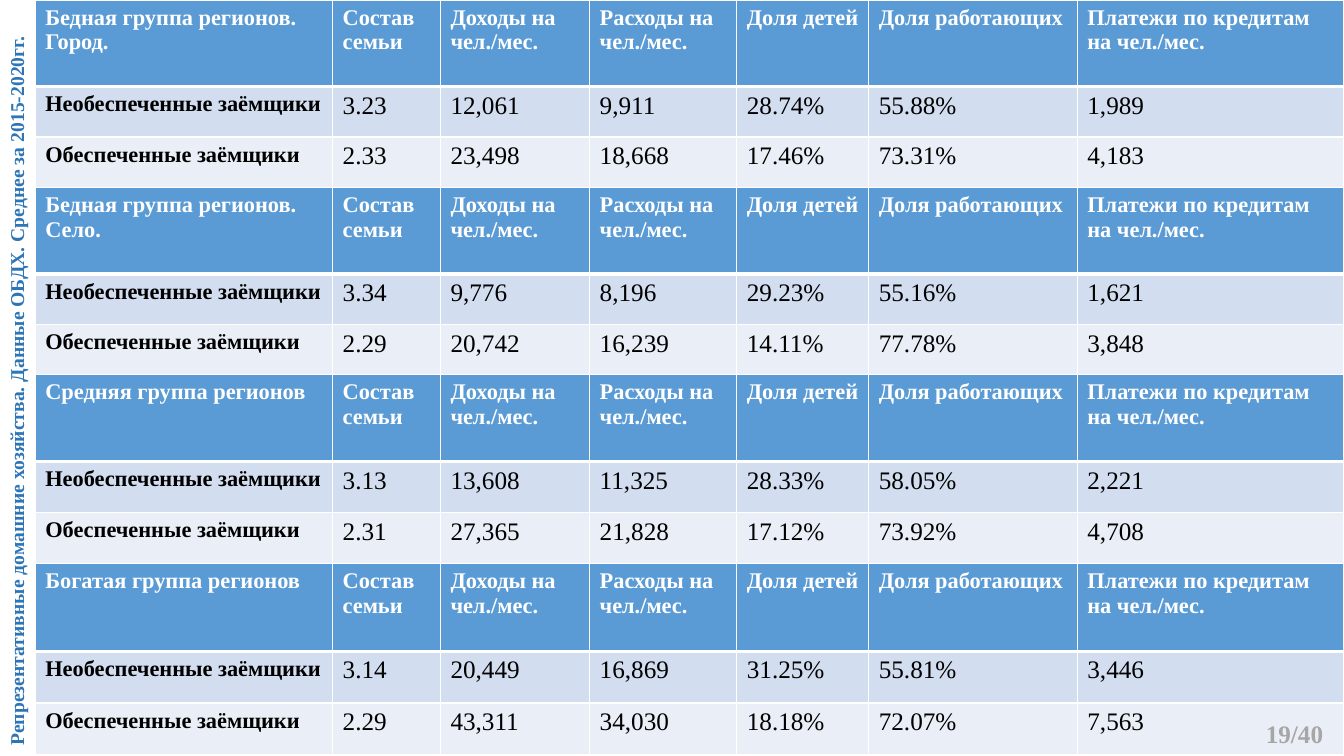
"""Builds a slide with four tables that compare borrower households by region group."""
from dataclasses import dataclass

from lxml.etree import SubElement
from pptx import Presentation
from pptx.dml.color import RGBColor
from pptx.enum.text import MSO_ANCHOR, MSO_AUTO_SIZE, PP_ALIGN
from pptx.oxml.ns import qn
from pptx.slide import Slide
from pptx.table import _Cell
from pptx.text.text import TextFrame
from pptx.util import Pt


@dataclass(frozen=True)
class Theme:
    face: str = "Times New Roman"
    title: str = "2E75B6"
    head: str = "5B9BD5"
    bands: tuple[str, str] = ("D2DEEF", "EAEFF7")
    light: str = "FFFFFF"
    dark: str = "000000"
    page: str = "A6A6A6"
    small: float = 14
    label: float = 16
    value: float = 18
    thin: float = 1
    thick: float = 3


@dataclass(frozen=True)
class Group:
    name: str
    poor: tuple[str, ...]
    rich: tuple[str, ...]
    head: float = 61.9
    row: float = 36


THEME = Theme()
LEFT = 25.2
COLS = (212.4, 77, 106.6, 105.1, 94.3, 149, 190.4)
HEADS = ("Состав семьи", "Доходы на чел./мес.", "Расходы на чел./мес.",
         "Доля детей", "Доля работающих", "Платежи по кредитам на чел./мес.")
GROUPS = (
    Group("Бедная группа регионов. Город.",
          ("3.23", "12,061", "9,911", "28.74%", "55.88%", "1,989"),
          ("2.33", "23,498", "18,668", "17.46%", "73.31%", "4,183")),
    Group("Бедная группа регионов. Село.",
          ("3.34", "9,776", "8,196", "29.23%", "55.16%", "1,621"),
          ("2.29", "20,742", "16,239", "14.11%", "77.78%", "3,848")),
    Group("Средняя группа регионов",
          ("3.13", "13,608", "11,325", "28.33%", "58.05%", "2,221"),
          ("2.31", "27,365", "21,828", "17.12%", "73.92%", "4,708"),
          row=36.5),
    Group("Богатая группа регионов",
          ("3.14", "20,449", "16,869", "31.25%", "55.81%", "3,446"),
          ("2.29", "43,311", "34,030", "18.18%", "72.07%", "7,563"),
          head=62.6, row=36.9),
)


def write(frame: TextFrame, text: str, size: float, color: str, bold: bool = True) -> None:
    frame.text = text
    font = frame.paragraphs[0].font
    font.name, font.size, font.bold = THEME.face, Pt(size), bold
    font.color.rgb = RGBColor.from_string(color)


def edge(cell: _Cell, side: str, width: float) -> None:
    props = cell._tc.get_or_add_tcPr()
    line = SubElement(props, qn(f"a:ln{side}"), w=str(Pt(width)))
    fill = SubElement(line, qn("a:solidFill"))
    SubElement(fill, qn("a:srgbClr"), val=THEME.light)


def paint(cell: _Cell, row: int) -> None:
    for side in "LRTB":
        heavy = (row, side) in ((0, "B"), (1, "T"))
        edge(cell, side, THEME.thick if heavy else THEME.thin)
    cell.fill.solid()
    color = (THEME.head, *THEME.bands)[row]
    cell.fill.fore_color.rgb = RGBColor.from_string(color)


def draw(slide: Slide, group: Group, top: float) -> float:
    rows = ((group.name, *HEADS),
            ("Необеспеченные заёмщики", *group.poor),
            ("Обеспеченные заёмщики", *group.rich))
    highs = (group.head, group.row, group.row)
    table = slide.shapes.add_table(len(rows), len(COLS), Pt(LEFT), Pt(top),
                                   Pt(sum(COLS)), Pt(sum(highs))).table
    for col, width in zip(table.columns, COLS):
        col.width = Pt(width)
    for r, (texts, high) in enumerate(zip(rows, highs)):
        table.rows[r].height = Pt(high)
        for c, text in enumerate(texts):
            cell = table.cell(r, c)
            paint(cell, r)
            bold = r == 0 or c == 0
            write(cell.text_frame, text, THEME.label if bold else THEME.value,
                  THEME.dark if r else THEME.light, bold)
    return top + sum(highs)


def main() -> None:
    deck = Presentation()
    deck.slide_width, deck.slide_height = Pt(960), Pt(540)
    slide = deck.slides.add_slide(deck.slide_layouts[5])

    title = slide.shapes.title
    title.left, title.top = Pt(-423.4), Pt(267.1)
    title.width, title.height = Pt(870.5), Pt(24.5)
    title.rotation = 270
    frame = title.text_frame
    write(frame, "Репрезентативные домашние хозяйства. Данные ОБДХ. Среднее за 2015-2020гг.",
          THEME.small, THEME.title)
    frame.paragraphs[0].alignment = PP_ALIGN.CENTER
    frame.vertical_anchor = MSO_ANCHOR.TOP
    frame.auto_size = MSO_AUTO_SIZE.SHAPE_TO_FIT_TEXT

    top = 0.0
    for group in GROUPS:
        top = draw(slide, group, top)

    page = slide.shapes.add_textbox(Pt(897.1), Pt(509.8), Pt(62.6), Pt(29))
    page.text_frame.word_wrap = True
    write(page.text_frame, "19/40", THEME.value, THEME.page)
    deck.save("out.pptx")


if __name__ == "__main__":
    main()
